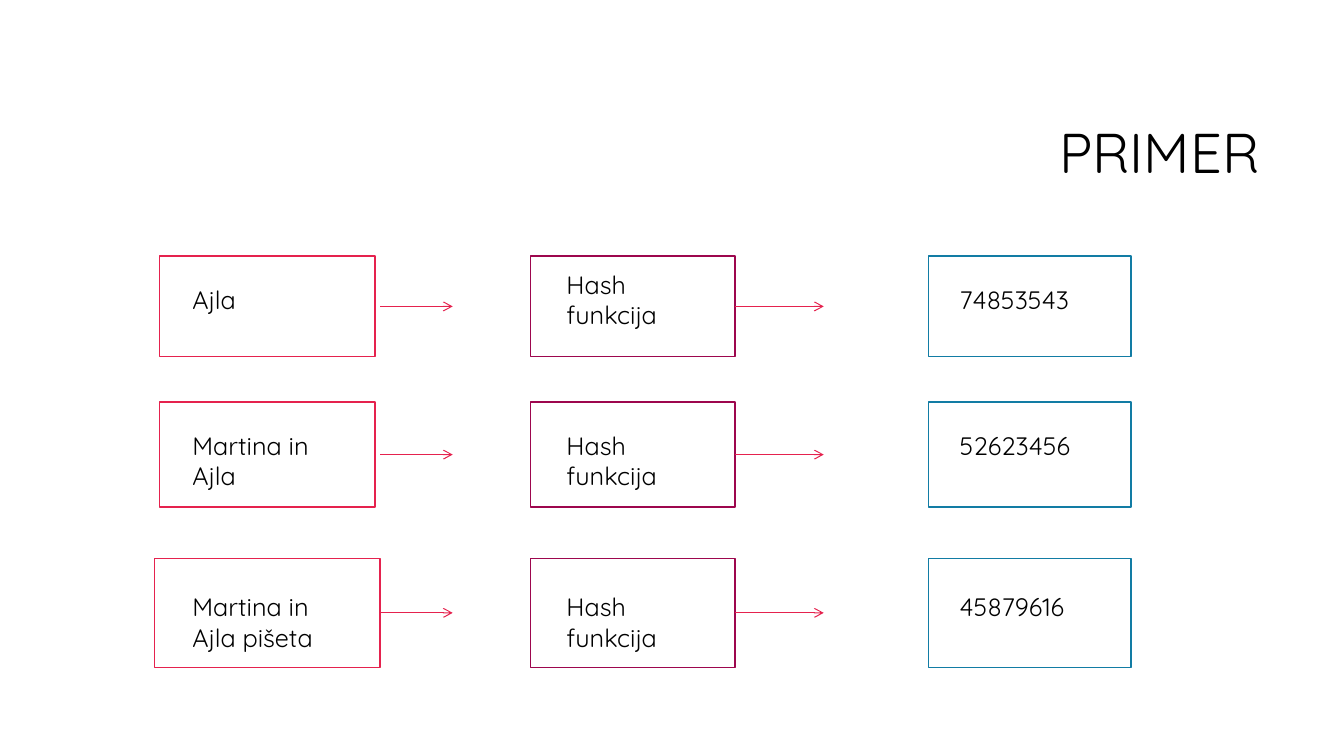
import dataclasses

import pptx
import pptx.dml.color
import pptx.enum.shapes
import pptx.enum.text
import pptx.oxml
import pptx.oxml.ns
import pptx.util

Inches = pptx.util.Inches
Pt = pptx.util.Pt
ALIGN = pptx.enum.text.PP_ALIGN
ANCHOR = pptx.enum.text.MSO_ANCHOR

FONT = "Quicksand"
COLORS = {
    "text": "000000",
    "paper": "FFFFFF",
    "input": "E5224E",
    "hash": "9D074E",
    "output": "127CA4",
    "arrow": "E5224E",
}


@dataclasses.dataclass
class Label:
    text: str
    top: float
    width: float
    height: float


@dataclasses.dataclass
class Row:
    top: float
    height: float
    input_left: float
    input_width: float
    input: Label
    hash: Label
    output: Label


ROWS = [
    Row(2.54, 1.0, 1.58, 2.14,
        Label("Ajla", 2.77, 1.41, 0.4),
        Label("Hash funkcija", 2.62, 1.5, 0.71),
        Label("74853543", 2.77, 1.62, 0.4)),
    Row(3.99, 1.04, 1.58, 2.14,
        Label("Martina in Ajla", 4.22, 1.51, 0.71),
        Label("Hash funkcija", 4.22, 1.33, 0.71),
        Label("52623456", 4.22, 1.62, 0.4)),
    Row(5.54, 1.08, 1.53, 2.24,
        Label("Martina in Ajla pišeta", 5.82, 1.62, 0.71),
        Label("Hash funkcija", 5.82, 1.33, 0.71),
        Label("45879616", 5.82, 1.51, 0.4)),
]
INPUT_TEXT_LEFT, HASH_TEXT_LEFT, OUTPUT_TEXT_LEFT = 1.81, 5.52, 9.42
HASH_LEFT, HASH_WIDTH = 5.26, 2.03
OUTPUT_LEFT, OUTPUT_WIDTH = 9.21, 2.01
INPUT_ARROW = (3.77, 4.49)
HASH_ARROW = (HASH_LEFT + HASH_WIDTH, 8.17)


def rgb(name: str) -> pptx.dml.color.RGBColor:
    return pptx.dml.color.RGBColor.from_string(COLORS[name])


def add_box(s, left: float, width: float, row: Row, color: str):
    sp = s.shapes.add_shape(
        pptx.enum.shapes.MSO_SHAPE.RECTANGLE,
        Inches(left), Inches(row.top), Inches(width), Inches(row.height))
    sp.shadow.inherit = False
    sp.fill.solid()
    sp.fill.fore_color.rgb = rgb("paper")
    sp.line.color.rgb = rgb(color)
    sp.line.width = Pt(1)
    return sp


def add_arrow(s, span: tuple[float, float], row: Row, source=None) -> None:
    y = Inches(row.top + row.height / 2)
    cxn = s.shapes.add_connector(
        pptx.enum.shapes.MSO_CONNECTOR.STRAIGHT,
        Inches(span[0]), y, Inches(span[1]), y)
    if source is not None:
        cxn.begin_connect(source, 3)
    cxn.line.color.rgb = rgb("arrow")
    cxn.line.width = Pt(0.75)
    qn = pptx.oxml.ns.qn
    sp_pr = cxn._element.spPr
    tail = sp_pr.find(qn("a:ln")).makeelement(qn("a:tailEnd"), {"type": "arrow"})
    sp_pr.find(qn("a:ln")).append(tail)
    sp_pr.append(sp_pr.makeelement(qn("a:effectLst"), {}))


def add_text(s, left: float, label: Label, size: float = 18):
    sp = s.shapes.add_textbox(
        Inches(left), Inches(label.top), Inches(label.width), Inches(label.height))
    tf = sp.text_frame
    tf.word_wrap = True
    p = tf.paragraphs[0]
    r = p.add_run()
    r.text = label.text
    r.font.name = FONT
    r.font.size = Pt(size)
    r.font.color.rgb = rgb("text")
    return tf


def main() -> None:
    prs = pptx.Presentation()
    prs.slide_width = Inches(13.33)
    prs.slide_height = Inches(7.5)
    s = prs.slides.add_slide(prs.slide_layouts[6])

    tf = add_text(s, 3.17, Label("PRIMER", 0.84, 9.42, 1.41), 40)
    tf.vertical_anchor = ANCHOR.MIDDLE
    tf.paragraphs[0].alignment = ALIGN.RIGHT
    tf.paragraphs[0].line_spacing = 0.9

    for row in ROWS:
        input_box = add_box(s, row.input_left, row.input_width, row, "input")
        hash_box = add_box(s, HASH_LEFT, HASH_WIDTH, row, "hash")
        add_box(s, OUTPUT_LEFT, OUTPUT_WIDTH, row, "output")
        touches = row.input_left + row.input_width >= INPUT_ARROW[0]
        add_arrow(s, INPUT_ARROW, row, input_box if touches else None)
        add_arrow(s, HASH_ARROW, row, hash_box)
        for left, label in ((INPUT_TEXT_LEFT, row.input),
                            (HASH_TEXT_LEFT, row.hash),
                            (OUTPUT_TEXT_LEFT, row.output)):
            tf = add_text(s, left, label)
            tf.auto_size = pptx.enum.text.MSO_AUTO_SIZE.SHAPE_TO_FIT_TEXT

    prs.save("out.pptx")


if __name__ == "__main__":
    main()
